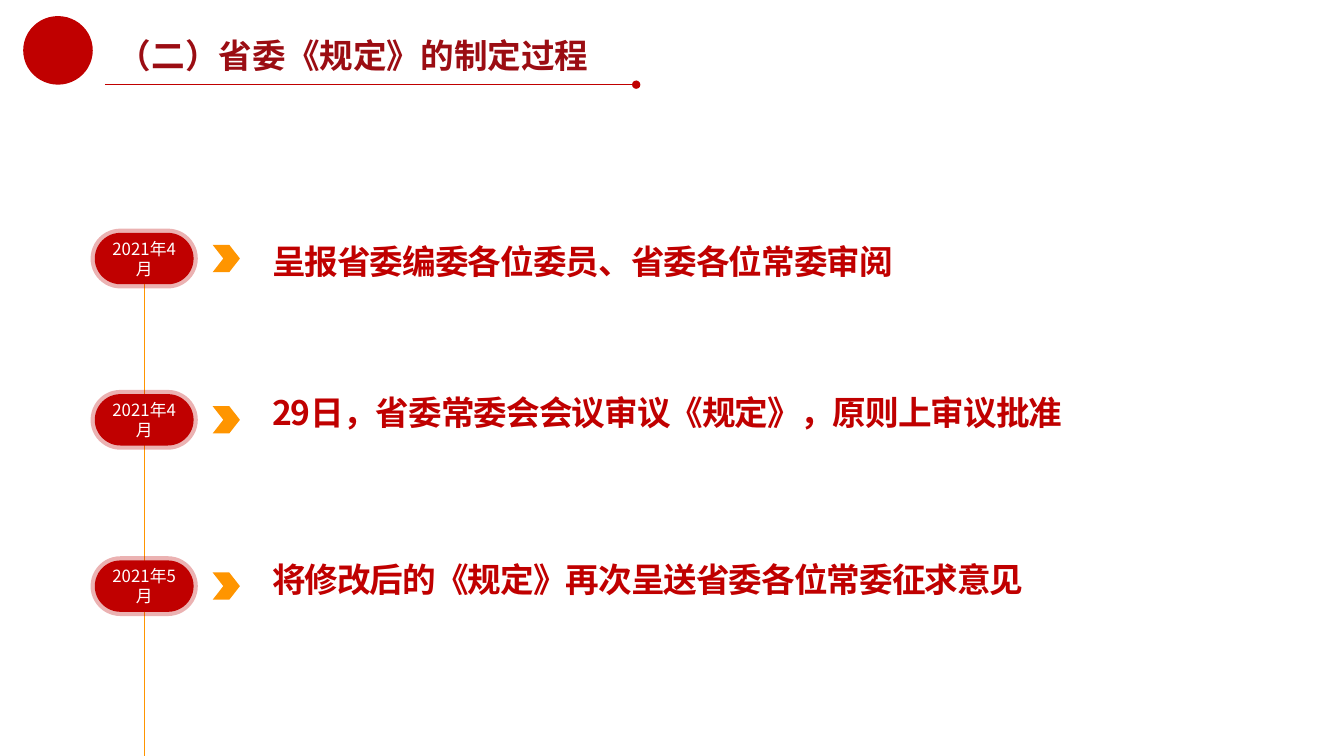
import pptx
import pptx.util
import pptx.dml.color
import pptx.enum.shapes
import pptx.enum.text
import pptx.oxml.ns
import lxml.etree

PX = 9144  # EMU in one px, 100 px to the inch
FONT = "Noto Sans CJK SC"
COLOURS = {"red": "C00000", "dark_red": "9B0D13", "orange": "FF9500", "white": "FFFFFF"}
SHAPES = pptx.enum.shapes.MSO_SHAPE
ANCHOR = pptx.enum.text.MSO_ANCHOR
ALIGN = pptx.enum.text.PP_ALIGN
FIT = pptx.enum.text.MSO_AUTO_SIZE

# date, pill top, text, text top, text height, line spacing in points
STEPS = [
    ("2021年4月", 231, "呈报省委编委各位委员、省委各位常委审阅", 228, 703, 53, 33),
    ("2021年4月", 391, "29日，省委常委会会议审议《规定》，原则上审议批准", 391, 940, 44, 24),
    ("2021年5月", 556, "将修改后的《规定》再次呈送省委各位常委征求意见", 556, 840, 44, 24),
]


def px(*lengths):
    return [pptx.util.Emu(length * PX) for length in lengths]


def rgb(name):
    return pptx.dml.color.RGBColor.from_string(COLOURS[name])


def add_child(parent, tag, **attributes):
    return lxml.etree.SubElement(parent, pptx.oxml.ns.qn(tag), **attributes)


def add_span(para, text, size, colour, bold=False, spacing=None):
    span = para.add_run()
    span.text = text
    span.font.size = pptx.util.Pt(size)
    span.font.bold = bold
    span.font.color.rgb = rgb(colour)
    span.font.name = FONT
    properties = span.font._element
    add_child(properties, "a:ea", typeface=FONT)
    if spacing is not None:
        properties.set("spc", str(spacing))


def add_shape(page, kind, place, colour):
    shape = page.shapes.add_shape(kind, *px(*place))
    shape.shadow.inherit = False
    shape.fill.solid()
    shape.fill.fore_color.rgb = rgb(colour)
    shape.line.fill.background()
    return shape


def add_line(page, ends, colour, width, oval_end=False):
    line = page.shapes.add_connector(pptx.enum.shapes.MSO_CONNECTOR.STRAIGHT, *px(*ends))
    line.line.color.rgb = rgb(colour)
    line.line.width = pptx.util.Pt(width)
    if oval_end:
        add_child(line.line._get_or_add_ln(), "a:tailEnd", type="oval")
    add_child(line._element.spPr, "a:effectLst")
    return line


def add_title(page, text):
    title = page.shapes.title
    title.left, title.top, title.width, title.height = px(107, 34, 512, 60)
    frame = title.text_frame
    frame.word_wrap = True
    frame.auto_size = FIT.NONE
    frame.vertical_anchor = ANCHOR.TOP
    para = frame.paragraphs[0]
    para.alignment = ALIGN.LEFT
    para.line_spacing = 0.9
    add_span(para, text, 24, "dark_red", bold=True)


def add_date_pill(page, date, top):
    pill = add_shape(page, SHAPES.ROUNDED_RECTANGLE, (94, top, 98, 51), "red")
    pill.adjustments[0] = 0.5
    # Pale halo from a wide translucent outline
    pill.line.color.rgb = rgb("red")
    pill.line.width = pptx.util.Pt(6)
    colour = pill.line._get_or_add_ln().find(".//" + pptx.oxml.ns.qn("a:srgbClr"))
    add_child(colour, "a:alpha", val="30000")
    frame = pill.text_frame
    frame.word_wrap = True
    frame.vertical_anchor = ANCHOR.MIDDLE
    para = frame.paragraphs[0]
    para.alignment = ALIGN.CENTER
    add_span(para, date, 12, "white")
    return pill


def add_step_text(page, text, top, width, height, spacing):
    box = page.shapes.add_textbox(*px(260, top, width, height))
    frame = box.text_frame
    frame.word_wrap = True
    frame.auto_size = FIT.SHAPE_TO_FIT_TEXT
    para = frame.paragraphs[0]
    para.alignment = ALIGN.JUSTIFY
    para.line_spacing = pptx.util.Pt(spacing)
    add_span(para, text, 24, "red", bold=True, spacing=-70)


def main():
    deck = pptx.Presentation()
    deck.slide_width, deck.slide_height = px(1333, 750)
    page = deck.slides.add_slide(deck.slide_layouts[5])

    # Heading with its rule and a plain disc for the emblem
    add_line(page, (104, 84, 631, 84), "red", 0.75, oval_end=True)
    add_shape(page, SHAPES.OVAL, (23, 16, 69, 68), "red")
    add_title(page, "（二）省委《规定》的制定过程")

    # Timeline: the spine lies behind the pills
    spine = add_line(page, (143, 282, 143, 750), "orange", 0.5)
    pills = []
    for date, pill_top, text, text_top, width, height, spacing in STEPS:
        add_step_text(page, text, text_top, width, height, spacing)
        pills.append(add_date_pill(page, date, pill_top))
        chevron = add_shape(page, SHAPES.CHEVRON, (211, pill_top + 12, 27, 27), "orange")
        chevron.adjustments[0] = 0.39
    spine.begin_connect(pills[0], 2)

    deck.save("out.pptx")


if __name__ == "__main__":
    main()
